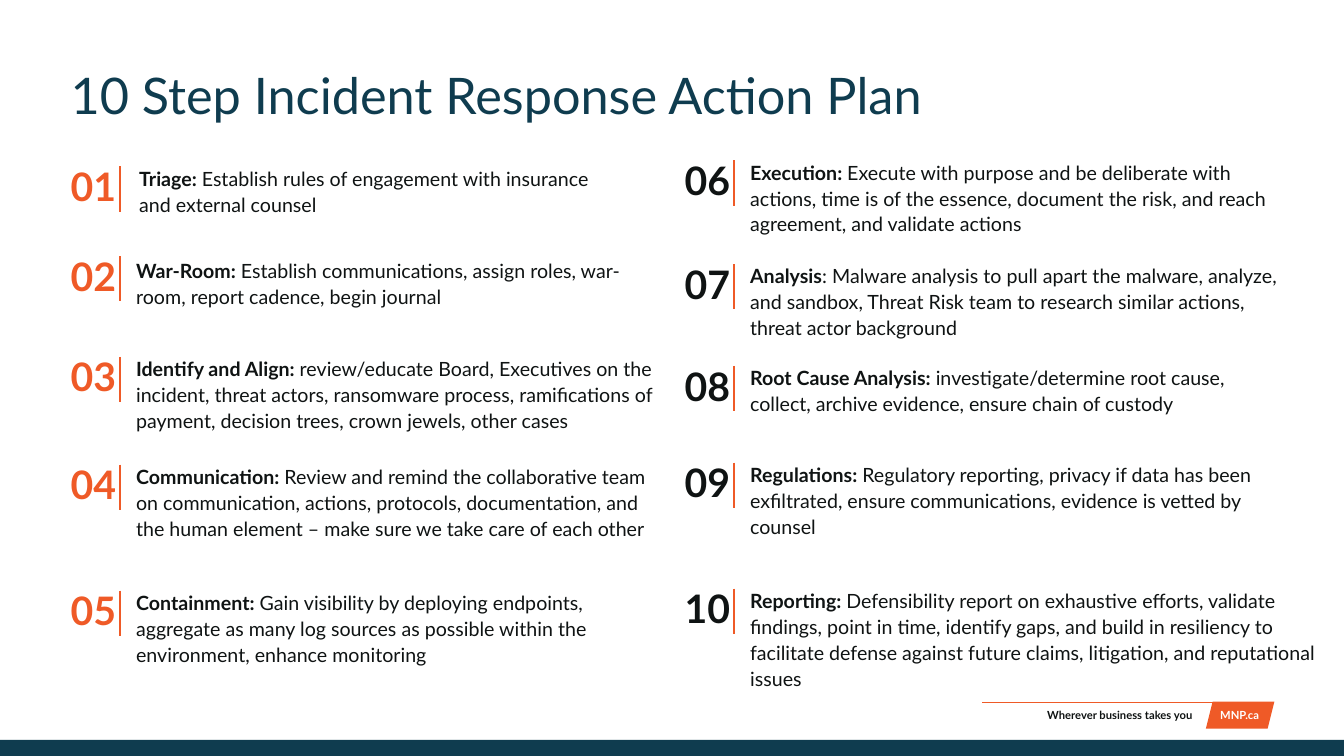
from dataclasses import dataclass

from lxml import etree
from pptx import Presentation, util as u
from pptx.dml.color import RGBColor
from pptx.enum import shapes, text
from pptx.oxml.ns import qn

# Content
TITLE = "10 Step Incident Response Action Plan"
TAGLINE = "Wherever business takes you"
SITE = "MNP.ca"

# Each step: row top, body offset from the number (x, y), body width, heading, detail
STEPS_LEFT = [
    (1.61, 0.68, 0.02, 4.72, "Triage: ",
     "Establish rules of engagement with insurance and external counsel"),
    (2.50, 0.65, 0.05, 5.02, "War-Room: ",
     "Establish communications, assign roles, war-room, report cadence, begin journal"),
    (3.50, 0.65, 0.02, 5.17, "Identify and Align: ",
     "review/educate Board, Executives on the incident, threat actors, ransomware process, "
     "ramifications of payment, decision trees, crown jewels, other cases"),
    (4.57, 0.65, 0.02, 5.17, "Communication: ",
     "Review and remind the collaborative team on communication, actions, protocols, "
     "documentation, and the human element – make sure we take care of each other"),
    (5.82, 0.65, 0.02, 5.31, "Containment: ",
     "Gain visibility by deploying endpoints, aggregate as many log sources as possible "
     "within the environment, enhance monitoring"),
]
STEPS_RIGHT = [
    (1.55, 0.65, 0.02, 5.22, "Execution: ",
     "Execute with purpose and be deliberate with actions, time is of the essence, "
     "document the risk, and reach agreement, and validate actions"),
    (2.58, 0.65, 0.02, 5.36, "Analysis",
     ": Malware analysis to pull apart the malware, analyze, and sandbox, Threat Risk team "
     "to research similar actions, threat actor background"),
    (3.59, 0.65, 0.02, 5.20, "Root Cause Analysis: ",
     "investigate/determine root cause, collect, archive evidence, ensure chain of custody"),
    (4.55, 0.65, 0.02, 5.36, "Regulations: ",
     "Regulatory reporting, privacy if data has been exfiltrated, ensure communications, "
     "evidence is vetted by counsel"),
    (5.80, 0.65, 0.02, 5.62, "Reporting: ",
     "Defensibility report on exhaustive efforts, validate findings, point in time, identify "
     "gaps, and build in resiliency to facilitate defense against future claims, litigation, "
     "and reputational issues"),
]


@dataclass(frozen=True)
class Theme:
    font: str = "Lato"
    navy: str = "0F3C4F"
    orange: str = "EF5A27"
    ink: str = "0F1313"
    white: str = "FFFFFF"
    title_size: int = 36
    number_size: int = 28
    body_size: int = 14
    footer_size: int = 8


THEME = Theme()
WIDTH, HEIGHT = 13.33, 7.5
MARGIN = 0.7
NUMBER_WIDTH, NUMBER_HEIGHT = 0.71, 0.47
RULE_X, RULE_Y, RULE_LENGTH = 0.49, 0.04, 0.45
BODY_HEIGHT = 0.26
# Each column: left edge, number colour, steps
COLUMNS = [(MARGIN, THEME.orange, STEPS_LEFT), (6.79, THEME.ink, STEPS_RIGHT)]


def inches(*lengths):
    return [u.Inches(length) for length in lengths]


def write(shape, parts, size, color, align=text.PP_ALIGN.LEFT, spacing=None, inset=0):
    """Fill a shape with one paragraph made of (words, bold) parts."""
    frame = shape.text_frame
    frame.word_wrap = True
    frame.auto_size = text.MSO_AUTO_SIZE.NONE
    frame.vertical_anchor = text.MSO_ANCHOR.TOP
    frame.margin_left = frame.margin_right = 0
    frame.margin_top = frame.margin_bottom = u.Inches(inset)
    paragraph = frame.paragraphs[0]
    paragraph.alignment = align
    paragraph.line_spacing = spacing
    for words, bold in parts:
        run = paragraph.add_run()
        run.text = words
        run.font.name = THEME.font
        run.font.size = u.Pt(size)
        run.font.bold = bold
        run.font.color.rgb = RGBColor.from_string(color)


def add_text(parent, box, *args, **kwargs):
    write(parent.add_textbox(*inches(*box)), *args, **kwargs)


def add_block(parent, kind, box, color):
    block = parent.add_shape(kind, *inches(*box))
    block.shadow.inherit = False
    block.fill.solid()
    block.fill.fore_color.rgb = RGBColor.from_string(color)
    block.line.fill.background()
    return block


def add_rule(parent, start, end, weight):
    rule = parent.add_connector(shapes.MSO_CONNECTOR.STRAIGHT, *inches(*start, *end))
    rule.line.color.rgb = RGBColor.from_string(THEME.orange)
    rule.line.width = u.Pt(weight)
    etree.SubElement(rule._element.spPr, qn("a:effectLst"))


def add_footer(slide):
    parts = slide.shapes
    tab = add_block(parts, shapes.MSO_SHAPE.PARALLELOGRAM, (11.96, 6.96, 0.68, 0.27),
                    THEME.orange)
    tab.adjustments[0] = 0.25
    add_text(parts, (12, 6.98, 0.59, 0.24), [(SITE, True)], THEME.footer_size,
             THEME.white, align=text.PP_ALIGN.CENTER, inset=0.05)
    add_rule(parts, (9.74, 6.97), (12.62, 6.97), 1)
    add_block(parts, shapes.MSO_SHAPE.RECTANGLE, (0, HEIGHT - 0.16, WIDTH, 0.16), THEME.navy)
    add_text(parts, (9.77, 6.98, 2.06, 0.24), [(TAGLINE, True)], THEME.footer_size,
             THEME.ink, align=text.PP_ALIGN.RIGHT, inset=0.05)


def add_step(slide, number, left, color, step):
    top, body_x, body_y, body_width, heading, detail = step
    group = slide.shapes.add_group_shape().shapes
    rule_x, rule_top = left + RULE_X, top + RULE_Y
    add_rule(group, (rule_x, rule_top), (rule_x, rule_top + RULE_LENGTH), 1.5)
    add_text(group, (left, top, NUMBER_WIDTH, NUMBER_HEIGHT), [(f"{number:02d}", True)],
             THEME.number_size, color)
    add_text(group, (left + body_x, top + body_y, body_width, BODY_HEIGHT),
             [(heading, True), (detail, False)], THEME.body_size, THEME.ink, spacing=1.1)


def main():
    presentation = Presentation()
    presentation.slide_width, presentation.slide_height = inches(WIDTH, HEIGHT)
    slide = presentation.slides.add_slide(presentation.slide_layouts[5])

    # Title
    title = slide.shapes.title
    title.left, title.top, title.width, title.height = inches(
        MARGIN, 0.7, WIDTH - 2 * MARGIN, 0.55)
    write(title, [(TITLE, False)], THEME.title_size, THEME.navy, spacing=0.9)

    add_footer(slide)

    # Two columns of numbered steps
    number = 1
    for left, color, steps in COLUMNS:
        for step in steps:
            add_step(slide, number, left, color, step)
            number += 1

    presentation.save("out.pptx")


if __name__ == "__main__":
    main()
